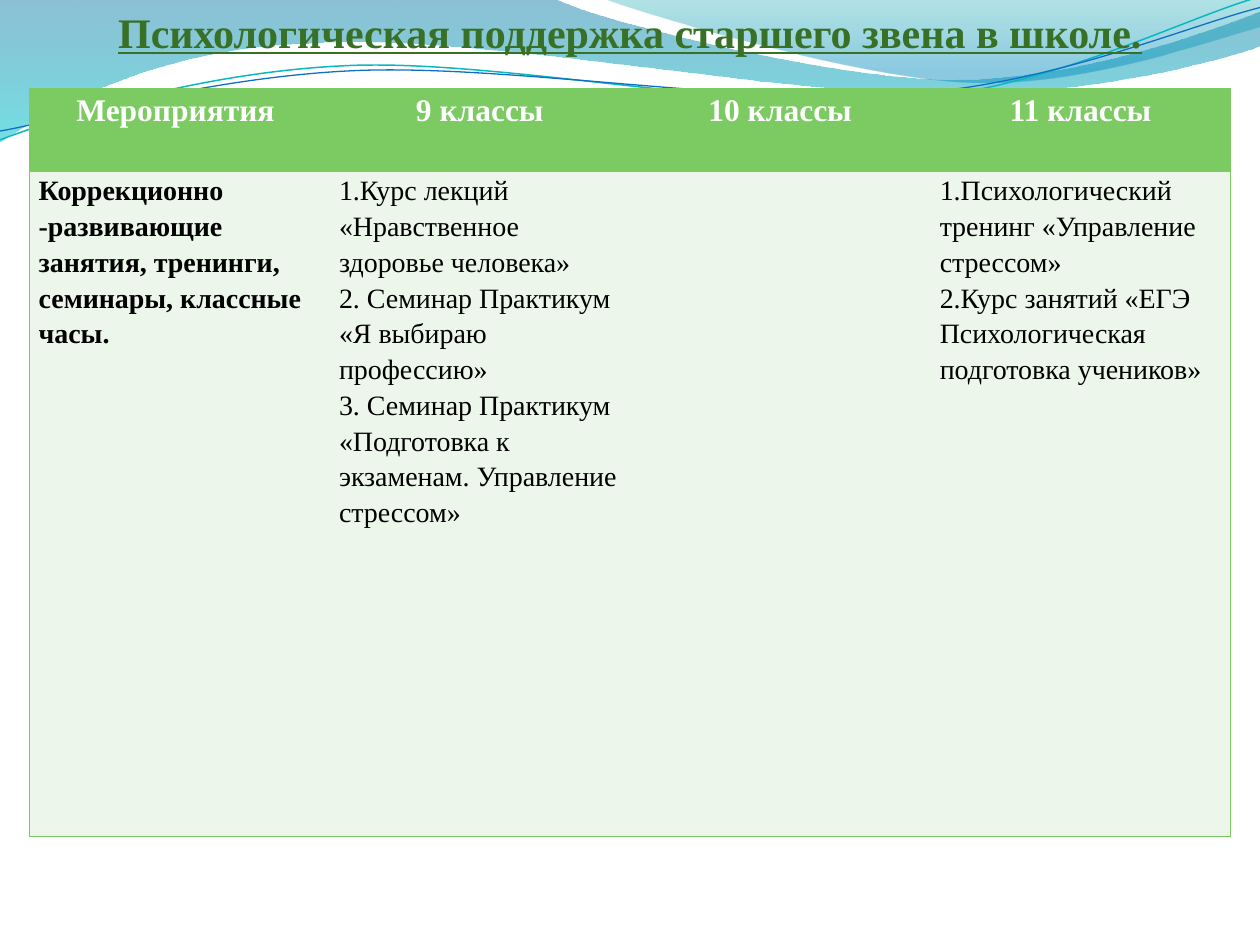
from math import cos, radians, sin

from lxml import etree
from pptx import Presentation
from pptx.dml.color import RGBColor
from pptx.enum.text import MSO_ANCHOR, PP_ALIGN
from pptx.oxml import parse_xml
from pptx.oxml.ns import nsdecls, qn
from pptx.util import Cm, Pt

CENTER, LEFT = PP_ALIGN.CENTER, PP_ALIGN.LEFT
MIDDLE, TOP = MSO_ANCHOR.MIDDLE, MSO_ANCHOR.TOP
FONT = "Times New Roman"
GREEN, PALE = "7CCA62", "ECF6EA"
NO_STYLE = "{2D5ABB26-0587-4C30-8999-92F81FD0307C}"
GRID = 2.54  # cm per unit of the wave coordinates
TILT = 2.7  # degrees the thin lines are turned to the left
PIVOT_X, PIVOT_Y = 4.99, 0.575


def color(hex_string):
    return RGBColor.from_string(hex_string)


def add_wave(shapes, start, segments, closed):
    """Segments hold one end point (line) or three Bezier points (curve)."""
    points = [start]
    for segment in segments:
        points += zip(segment[::2], segment[1::2])
    emu = [(Cm(x * GRID), Cm(y * GRID)) for x, y in points]
    builder = shapes.build_freeform(*emu[0])
    builder.add_line_segments(emu[1:], close=closed)
    wave = builder.convert_to_shape()
    wave.shadow.inherit = False
    # Join each run of three points into one Bezier curve
    nodes = iter(list(wave._element.spPr.iter(qn("a:lnTo"))))
    for segment in segments:
        node = next(nodes)
        if len(segment) == 6:
            curve = etree.Element(qn("a:cubicBezTo"))
            node.addprevious(curve)
            for part in (node, next(nodes), next(nodes)):
                curve.append(part[0])
                part.getparent().remove(part)
    return wave


deck = Presentation()
deck.slide_width, deck.slide_height = Cm(25.4), Cm(19.05)
page = deck.slides.add_slide(deck.slide_layouts[5])
page.background.fill.solid()
page.background.fill.fore_color.rgb = color("FFFFFF")

# Filled waves: start, segments, gradient stops (position, colour, opacity %)
bands = [
    ((0, 0),
     [(4.4, -0.01), (4.76, 0.17, 6.64, 0.63, 7.58, 0.63),
      (8.53, 0.63, 9.58, 0.26, 10, 0.09), (10.01, 0.36),
      (9.83, 0.44, 8.7, 0.76, 7.46, 0.75), (6.22, 0.75, 3.82, 0.28, 2.57, 0.34),
      (1.29, 0.36, 0.46, 0.83, -0.01, 1.13), (0, 0)],
     [(0, "0074A1", 45), (1, "00C6CF", 55)]),
    ((4.79, -0.01),
     [(5.09, 0.11, 6.82, 0.62, 7.69, 0.65), (8.56, 0.69, 9.61, 0.32, 10, 0.21),
      (10, 0), (4.79, -0.01)],
     [(0, "00A1A9", 30), (0.8, "008BBF", 45)]),
]
for start, segments, stops in bands:
    band = add_wave(page.shapes, start, segments, True)
    band.line.fill.background()
    band.fill.gradient()
    band.fill.gradient_angle = 270
    for stop, (position, shade, opacity) in zip(band.fill.gradient_stops, stops):
        stop.position = position
        stop.color.rgb = color(shade)
    for node, (_, _, opacity) in zip(band._element.spPr.iter(qn("a:srgbClr")), stops):
        etree.SubElement(node, qn("a:alpha")).set("val", str(opacity * 1000))

# Thin wave lines, laid level first and then turned as shapes
lines = [
    ((0, 1.11),
     [(0.48, 0.93, 1.58, 0.57, 2.77, 0.52), (3.95, 0.47, 5.93, 0.89, 7.13, 0.8),
      (8.33, 0.71, 9.38, 0.15, 9.98, -0.02)], "0AB8BF", 0.85),
    ((0, 1.04),
     [(0.47, 0.96, 1.64, 0.61, 2.83, 0.56), (4.03, 0.51, 5.97, 0.84, 7.17, 0.75),
      (8.36, 0.67, 9.41, 0.21, 10, 0.06)], "0F6FC6", 0.75),
]
cosine, sine = cos(radians(TILT)), sin(radians(TILT))
for start, segments, shade, width in lines:
    level = []
    for segment in [start] + segments:
        turned = []
        for x, y in zip(segment[::2], segment[1::2]):
            dx, dy = x - PIVOT_X, y - PIVOT_Y
            turned += [PIVOT_X + dx * cosine - dy * sine, PIVOT_Y + dx * sine + dy * cosine]
        level.append(turned)
    line = add_wave(page.shapes, level[0], level[1:], False)
    line.rotation = 360 - TILT
    line.fill.background()
    line.line.color.rgb = color(shade)
    line.line.width = Pt(width)

# Title, brought in front of the waves
title = page.shapes.title
page.shapes._spTree.append(title._element)
title.left, title.top, title.width, title.height = Cm(0), Cm(0), Cm(25.4), Cm(1.27)
title.text_frame.text = "Психологическая поддержка старшего звена в школе."
title.text_frame.vertical_anchor = MIDDLE
para = title.text_frame.paragraphs[0]
para.alignment = CENTER
font = para.runs[0].font
font.name, font.size, font.bold, font.underline = FONT, Pt(24), True, True
font.color.rgb = color("387026")

# Table
rows = [
    ["Мероприятия ", "9 классы", "10 классы", "11 классы"],
    ["Коррекционно -развивающие занятия, тренинги, семинары, классные часы.",
     "1.Курс лекций «Нравственное здоровье человека»\n"
     "2. Семинар Практикум «Я выбираю профессию»\n"
     "3. Семинар Практикум «Подготовка к экзаменам. Управление стрессом»",
     "",
     "1.Психологический тренинг «Управление стрессом»\n"
     "2.Курс занятий «ЕГЭ Психологическая подготовка учеников»"],
]
frame = page.shapes.add_table(2, 4, Cm(0.59), Cm(1.78), Cm(24.22), Cm(15.08))
table = frame.table
table._tbl.tblPr.find(qn("a:tableStyleId")).text = NO_STYLE
table.rows[0].height, table.rows[1].height = Cm(1.67), Cm(13.41)
for column in table.columns:
    column.width = Cm(24.22 / 4)

for r, texts in enumerate(rows):
    header = r == 0
    for c, text in enumerate(texts):
        cell = table.cell(r, c)
        cell.margin_left = cell.margin_right = Cm(0.19)
        cell.margin_top = cell.margin_bottom = Cm(0)
        cell.vertical_anchor = TOP
        cell.text_frame.text = text
        for para in cell.text_frame.paragraphs:
            para.alignment = CENTER if header else LEFT
            para.line_spacing = 1.15
            for span in para.runs:
                span.font.name = FONT
                span.font.size = Pt(18 if header else 16)
                span.font.bold = header or c == 0
                span.font.color.rgb = color("FFFFFF" if header else "000000")

        # Outer edges and the rule under the header
        sides = ["L"] * (c == 0) + ["R"] * (c == 3) + ["T", "B"]
        for side in sides:
            cell._tc.get_or_add_tcPr().append(parse_xml(
                f'<a:ln{side} {nsdecls("a")} w="12700"><a:solidFill>'
                f'<a:srgbClr val="{GREEN}"/></a:solidFill></a:ln{side}>'))
        cell.fill.solid()
        cell.fill.fore_color.rgb = color(GREEN if header else PALE)

deck.save("out.pptx")
